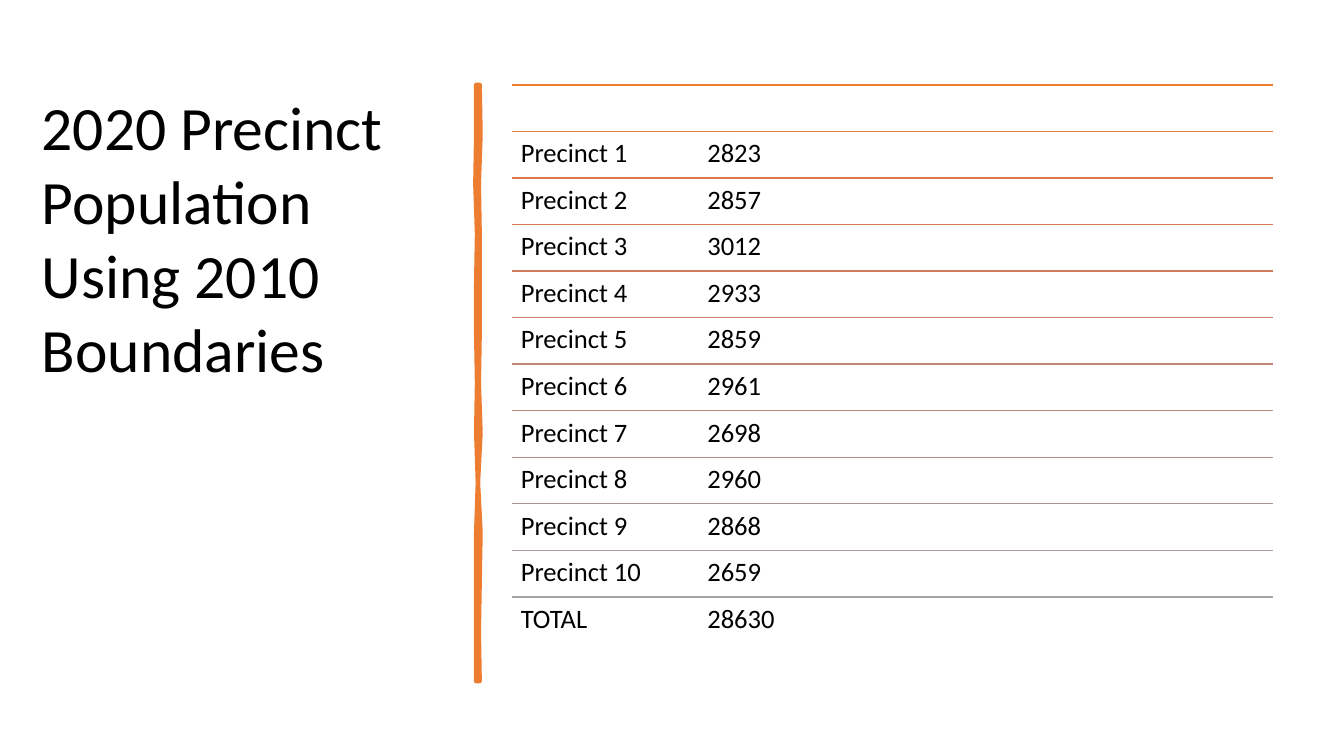
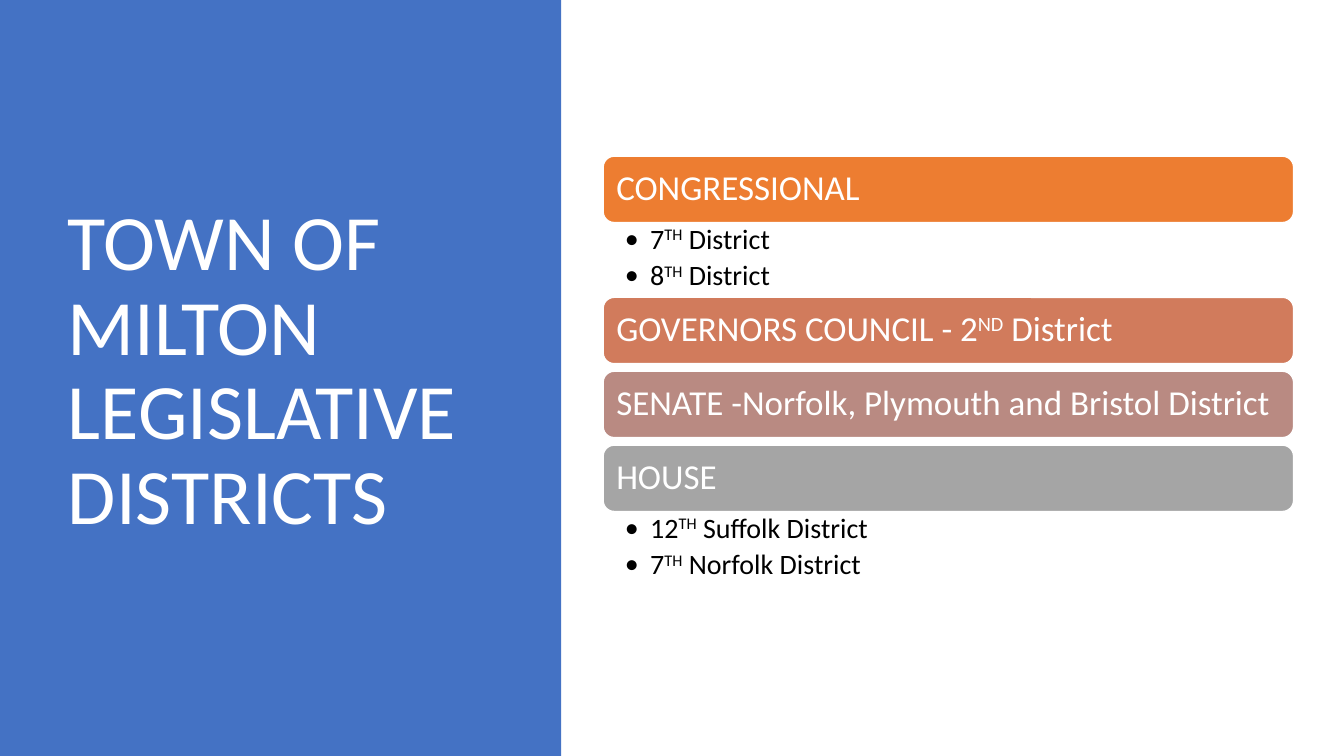
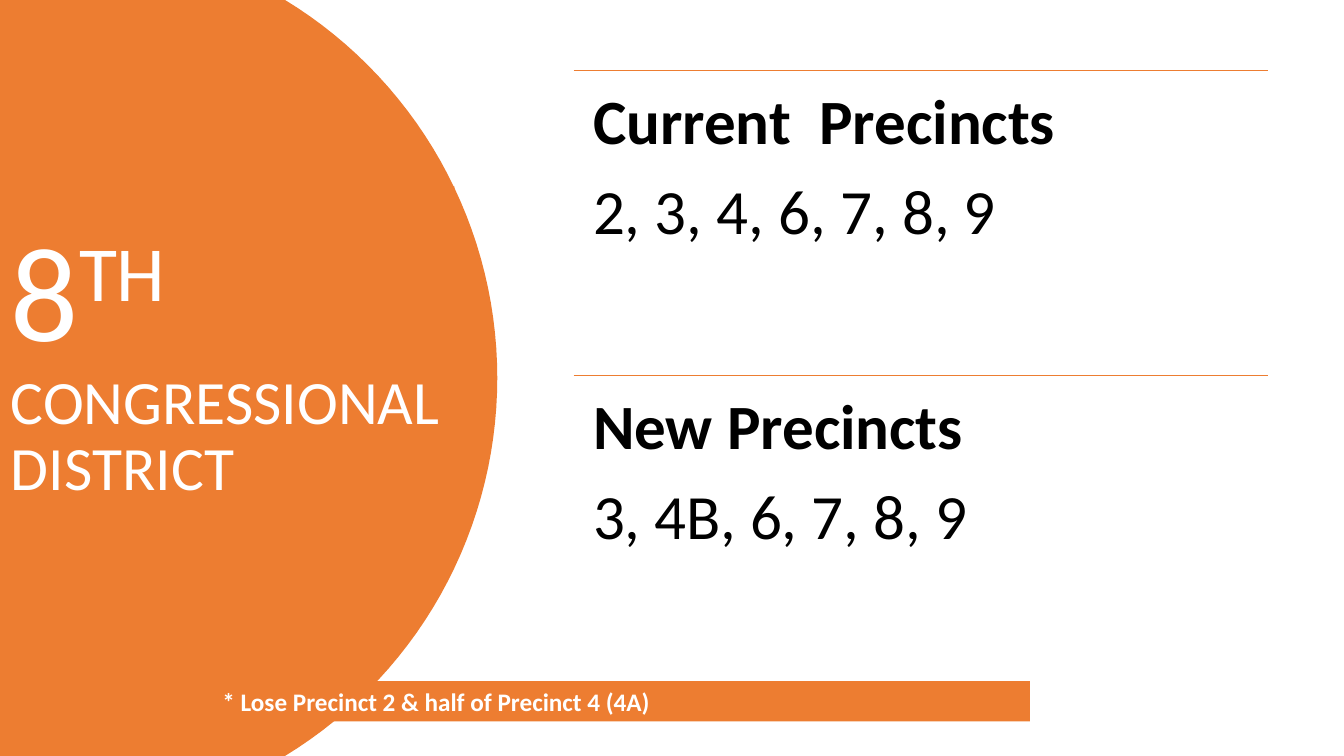
"""Build three slides on precinct population and legislative districts."""
import colorsys
import math
from dataclasses import dataclass

from lxml import etree
from pptx import Presentation
from pptx.dml.color import RGBColor
from pptx.enum.shapes import MSO_CONNECTOR, MSO_SHAPE
from pptx.enum.text import MSO_ANCHOR, PP_ALIGN
from pptx.oxml.ns import qn
from pptx.util import Inches, Pt

RECT = MSO_SHAPE.RECTANGLE
ROUND = MSO_SHAPE.ROUNDED_RECTANGLE
STRAIGHT = MSO_CONNECTOR.STRAIGHT
TOP, MIDDLE = MSO_ANCHOR.TOP, MSO_ANCHOR.MIDDLE
LEFT = PP_ALIGN.LEFT

COLS, ROWS = 16, 9
CELL = 7.5 / ROWS
FONT = "Calibri"
COLORS = {
    "orange": "ED7D31",
    "gray": "A5A5A5",
    "blue": "4472C4",
    "white": "FFFFFF",
    "black": "000000",
}
PLAIN_INSETS = (0.12, 0.06, 0.12, 0.06)

POPULATION = [2823, 2857, 3012, 2933, 2859, 2961, 2698, 2960, 2868, 2659]
BRUSH_LEFT = [0, 0, -1, 1, 0, 0, 1, 0, 2, 0, 0, 0, 0]
BRUSH_RIGHT = [1, 2, 0, 1, 1, 1, 0, 2, -1, 2, 1, 0, 1]


@dataclass(frozen=True)
class Box:
    """A rectangle in grid columns and rows."""
    x: float
    y: float
    w: float
    h: float

    def emu(self) -> list:
        """Return left, top, width and height as slide lengths."""
        return [grid(v) for v in (self.x, self.y, self.w, self.h)]


@dataclass(frozen=True)
class Chamber:
    """A legislative body with the districts listed below its bar."""
    name: str
    districts: tuple = ()


@dataclass(frozen=True)
class PrecinctList:
    """A heading and the precincts under it."""
    heading: str
    precincts: str


CHAMBERS = [
    Chamber("CONGRESSIONAL", ("7^TH^ District", "8^TH^ District")),
    Chamber("GOVERNORS COUNCIL - 2^ND^ District"),
    Chamber("SENATE -Norfolk, Plymouth and Bristol District"),
    Chamber("HOUSE", ("12^TH^ Suffolk District", "7^TH^ Norfolk District")),
]
PRECINCT_LISTS = [
    PrecinctList("Current  Precincts", "2, 3, 4, 6, 7, 8, 9"),
    PrecinctList("New Precincts", "3, 4B, 6, 7, 8, 9"),
]


def grid(units: float) -> int:
    """Convert grid units to a slide length."""
    return Inches(units * CELL)


def rgb(color: str) -> RGBColor:
    """Return the colour for a palette name or a hex string."""
    return RGBColor.from_string(COLORS.get(color, color))


def fade(count: int) -> list[str]:
    """Return hex colours stepping from orange to gray by hue, lightness, saturation."""
    start, end = (
        colorsys.rgb_to_hls(*(v / 255 for v in rgb(name))) for name in ("orange", "gray"))
    steps = []
    for i in range(count):
        hls = [a + (b - a) * i / (count - 1) for a, b in zip(start, end)]
        steps.append("".join(f"{round(v * 255):02X}" for v in colorsys.hls_to_rgb(*hls)))
    return steps


def set_frame(sp, insets: tuple = PLAIN_INSETS, anchor=TOP):
    """Prepare a text frame with insets in grid units and return it."""
    tf = sp.text_frame
    tf.word_wrap = True
    tf.vertical_anchor = anchor
    tf.margin_left, tf.margin_top, tf.margin_right, tf.margin_bottom = map(grid, insets)
    return tf


def add_text(tf, text: str, *, size: float, color: str = "black", bold: bool = False,
             spacing: float = 0.9, after: float = 0, bullet: bool = False,
             tab: float | None = None, tail_size: float | None = None) -> None:
    """Add a paragraph in which carets enclose superscript text."""
    p = tf.paragraphs[0] if not tf.paragraphs[0].runs else tf.add_paragraph()
    p.alignment, p.line_spacing, p.space_after = LEFT, spacing, Pt(after)
    pPr = p._p.get_or_add_pPr()
    if bullet:
        pPr.set("marL", str(grid(0.3)))
        pPr.set("indent", str(-grid(0.3)))
        etree.SubElement(pPr, qn("a:buFont"), typeface=FONT)
        etree.SubElement(pPr, qn("a:buChar"), char="•")
    if tab:
        stops = etree.SubElement(pPr, qn("a:tabLst"))
        etree.SubElement(stops, qn("a:tab"), pos=str(grid(tab)), algn="l")
    for i, part in enumerate(text.split("^")):
        r = p.add_run()
        r.text = part
        r.font.name, r.font.bold = FONT, bold
        r.font.size = Pt(tail_size if tail_size and i > 1 else size)
        r.font.color.rgb = rgb(color)
        if i % 2:
            r._r.get_or_add_rPr().set("baseline", "30000")


def paint(sp, color: str, line: str | None = None, width: float = 1) -> None:
    """Give a shape a solid fill, an optional outline and no shadow."""
    sp.shadow.inherit = False
    sp.fill.solid()
    sp.fill.fore_color.rgb = rgb(color)
    if line:
        sp.line.color.rgb = rgb(line)
        sp.line.width = Pt(width)
    else:
        sp.line.fill.background()


def add_block(s, kind, box: Box, color: str, line: str | None = None):
    """Add a painted preset shape."""
    sp = s.shapes.add_shape(kind, *box.emu())
    paint(sp, color, line)
    return sp


def add_box(s, box: Box, insets: tuple = PLAIN_INSETS, anchor=TOP):
    """Add a text box and return its frame."""
    return set_frame(s.shapes.add_textbox(*box.emu()), insets, anchor)


def add_outline(s, points: list[tuple[float, float]]):
    """Add a closed outline through grid points."""
    (x, y), *rest = [(grid(px), grid(py)) for px, py in points]
    builder = s.shapes.build_freeform(x, y)
    builder.add_line_segments(rest, close=True)
    return builder.convert_to_shape()


def add_rule(s, x: float, y: float, w: float, color: str = "orange") -> None:
    """Add a thin horizontal line."""
    line = s.shapes.add_connector(STRAIGHT, grid(x), grid(y), grid(x + w), grid(y))
    line.line.color.rgb = rgb(color)
    line.line.width = Pt(1)
    etree.SubElement(line._element.spPr, qn("a:effectLst"))


def add_population_list(s, box: Box, tab: float) -> None:
    """Add ruled rows of tabbed text, the first row empty."""
    rows = [""] + [f"Precinct {i}\t{n}" for i, n in enumerate(POPULATION, 1)]
    rows.append(f"TOTAL\t{sum(POPULATION)}")
    height = box.h / len(rows)
    for i, (text, color) in enumerate(zip(rows, fade(len(rows)))):
        y = box.y + i * height
        add_rule(s, box.x, y, box.w, color)
        if text:
            tf = add_box(s, Box(box.x, y, box.w, height), (0.1,) * 4)
            add_text(tf, text, size=19, tab=tab)


def build_population(s) -> None:
    """Draw the population slide."""
    top, height = 1.01, 7.1
    step = height / (len(BRUSH_LEFT) - 1)
    left = [(5.67 + d / 100, top + i * step) for i, d in enumerate(BRUSH_LEFT)]
    right = [(5.7 + d / 100, top + i * step) for i, d in enumerate(BRUSH_RIGHT)]
    paint(add_outline(s, left + right[::-1]), "orange", "orange", 3.25)
    add_population_list(s, Box(6.1, top, 9.06, 6.65), 2.22)
    add_text(add_box(s, Box(0.38, 1, 4.45, 3.67)),
             "2020 Precinct Population Using 2010 Boundaries", size=44, spacing=1)


def build_districts(s) -> None:
    """Draw the legislative districts slide."""
    add_block(s, RECT, Box(0, 0, 6.68, ROWS), "blue")
    add_text(add_box(s, Box(0.69, 0.82, 4.99, 7.22), anchor=MIDDLE),
             "TOWN OF MILTON LEGISLATIVE DISTRICTS", size=56, color="white")
    x, y, width, bar, body, gap = 7.18, 1.86, 8.22, 0.79, 0.89, 0.09
    for chamber, color in zip(CHAMBERS, fade(len(CHAMBERS))):
        sp = add_block(s, ROUND, Box(x, y, width, bar), color, "white")
        add_text(set_frame(sp, (0.12, 0.12, 0.08, 0.12), MIDDLE),
                 chamber.name, size=25, color="white")
        y += bar
        if chamber.districts:
            tf = add_box(s, Box(x, y, width, body), (0.26, 0.03, 0.23, 0.04))
            for district in chamber.districts:
                add_text(tf, district, size=20, after=4.5, bullet=True)
        y += body if chamber.districts else gap


def build_congressional(s) -> None:
    """Draw the congressional district slide."""
    cx, cy, radius, steps = 0.65, ROWS / 2, 5.27, 60
    reach = math.asin(cy / radius)
    angles = [reach * (2 * i / steps - 1) for i in range(steps + 1)]
    arc = [(cx + radius * math.cos(a), cy + radius * math.sin(a)) for a in angles]
    paint(add_outline(s, [(0, 0), *arc, (0, ROWS)]), "orange")
    title = add_block(s, RECT, Box(0, 2.22, 5.41, 4.25), "orange")
    add_text(set_frame(title, (0.13, 0.06, 0.12, 0.06), MIDDLE),
             "8^TH^ CONGRESSIONAL DISTRICT",
             size=96, tail_size=44, color="white", after=6)
    x, top, width, pitch = 6.83, 0.84, 8.26, 3.63
    for i, item in enumerate(PRECINCT_LISTS):
        y = top + i * pitch
        add_rule(s, x, y, width)
        tf = add_box(s, Box(x, y, width, pitch), (0.23,) * 4)
        add_text(tf, item.heading, size=45, bold=True, after=15.75)
        add_text(tf, item.precincts, size=45, after=15.75)
    note = add_block(s, RECT, Box(2.53, 8.11, 9.73, 0.48), "orange")
    add_text(set_frame(note), "* Lose Precinct 2 & half of Precinct 4 (4A)",
             size=18, color="white", bold=True, spacing=1)


def main() -> None:
    """Build and save the presentation."""
    prs = Presentation()
    prs.slide_width, prs.slide_height = grid(COLS), grid(ROWS)
    for build in (build_population, build_districts, build_congressional):
        build(prs.slides.add_slide(prs.slide_layouts[6]))
    prs.save("out.pptx")


if __name__ == "__main__":
    main()
